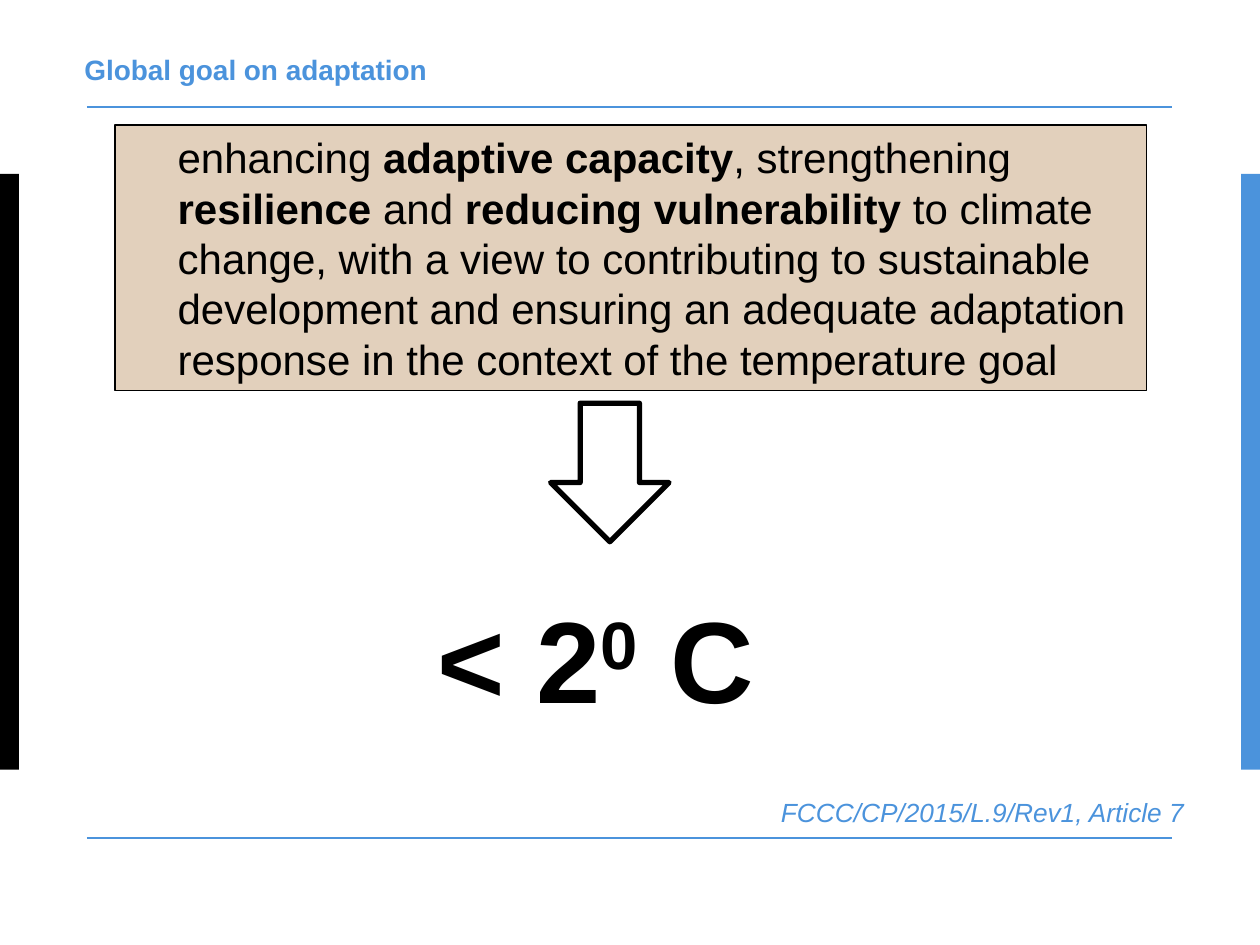
import pptx
import pptx.util
import pptx.dml.color
import pptx.enum.shapes
import pptx.enum.text
import pptx.oxml.ns
import lxml.etree

Inches = pptx.util.Inches
Pt = pptx.util.Pt
Shape = pptx.enum.shapes.MSO_SHAPE
Align = pptx.enum.text.PP_ALIGN
Anchor = pptx.enum.text.MSO_ANCHOR
qn = pptx.oxml.ns.qn

COLOURS = {"blue": "4B93DC", "black": "000000", "sand": "E2D0BC", "white": "FFFFFF"}


class SlideBuilder:
    font_name = "Arial"

    def __init__(self, page):
        self.page = page

    def colour(self, name):
        return pptx.dml.color.RGBColor.from_string(COLOURS[name])

    def shape(self, kind, place, fill, line_width=0):
        shape = self.page.shapes.add_shape(kind, *map(Inches, place))
        shape.shadow.inherit = False
        shape.fill.solid()
        shape.fill.fore_color.rgb = self.colour(fill)
        if line_width:
            shape.line.color.rgb = self.colour("black")
            shape.line.width = Pt(line_width)
            outline = shape._element.spPr.find(qn("a:ln"))
            lxml.etree.SubElement(outline, qn("a:round"))
        else:
            shape.line.fill.background()
        return shape

    def rule(self, top):
        line = self.page.shapes.add_connector(
            pptx.enum.shapes.MSO_CONNECTOR.STRAIGHT,
            Inches(0.69), Inches(top), Inches(9.3), Inches(top))
        line.line.color.rgb = self.colour("blue")
        line.line.width = Pt(1)
        lxml.etree.SubElement(line._element.spPr, qn("a:effectLst"))

    def text_box(self, place, spans, colour, frame_format, font_format, **para_format):
        box = self.page.shapes.add_textbox(*map(Inches, place))
        return self.fill_text(box, spans, colour, frame_format, font_format, **para_format)

    def fill_text(self, box, spans, colour, frame_format, font_format, **para_format):
        frame = box.text_frame
        para = frame.paragraphs[0]
        for target, values in ((frame, frame_format), (para, para_format)):
            for name, value in values.items():
                setattr(target, name, value)
        for text, extra in spans:
            span = para.add_run()
            span.text = text
            span.font.color.rgb = self.colour(colour)
            for name, value in {"name": self.font_name, **font_format, **extra}.items():
                if name == "baseline":
                    span._r.get_or_add_rPr().set("baseline", str(value))
                else:
                    setattr(span.font, name, value)
        return para


def main():
    deck = pptx.Presentation()
    deck.slide_width, deck.slide_height = Inches(10), Inches(7.5)
    builder = SlideBuilder(deck.slides.add_slide(deck.slide_layouts[6]))

    for left, fill in ((0, "black"), (9.85, "blue")):
        builder.shape(Shape.RECTANGLE, (left, 1.38, 0.15, 4.73), fill)
    for top in (0.85, 6.65):
        builder.rule(top)

    margins = ("margin_left", "margin_top", "margin_right", "margin_bottom")
    flush = {**dict.fromkeys(margins, 0), "word_wrap": True, "vertical_anchor": Anchor.MIDDLE}
    bold = {"bold": True}

    builder.text_box((0.67, 0.41, 8.61, 0.34), [("Global goal on adaptation", {})], "blue",
                     flush, {"size": Pt(16), **bold}, line_spacing=Pt(15))
    builder.text_box((6.1, 6.27, 3.44, 0.35), [("FCCC/CP/2015/L.9/Rev1, Article 7", {})], "blue",
                     {"word_wrap": False}, {"size": Pt(15), "italic": True})

    goal = builder.shape(Shape.RECTANGLE, (0.91, 0.99, 8.19, 2.11), "sand", 1)
    goal_spans = [
        ("enhancing ", {}),
        ("adaptive capacity", bold),
        (", strengthening ", {}),
        ("resilience ", bold),
        ("and ", {}),
        ("reducing vulnerability ", bold),
        ("to climate change, with a view to contributing to sustainable development and "
         "ensuring an adequate adaptation response in the context of the temperature goal", {}),
    ]
    para = builder.fill_text(goal, goal_spans, "black", flush, {"size": Pt(24)},
                             alignment=Align.LEFT, level=1)
    properties = para._p.get_or_add_pPr()
    properties.set("marL", str(Inches(0.5)))
    properties.set("indent", "0")

    builder.shape(Shape.DOWN_ARROW, (4.37, 3.2, 0.94, 1.1), "white", 3)
    builder.text_box((3.11, 4.62, 3.23, 1.21),
                     [("< 2", {}), ("0", {"baseline": 30000}), (" C", {})], "black",
                     {"word_wrap": True}, {"size": Pt(66), **bold}, alignment=Align.CENTER)

    deck.save("out.pptx")


if __name__ == "__main__":
    main()
